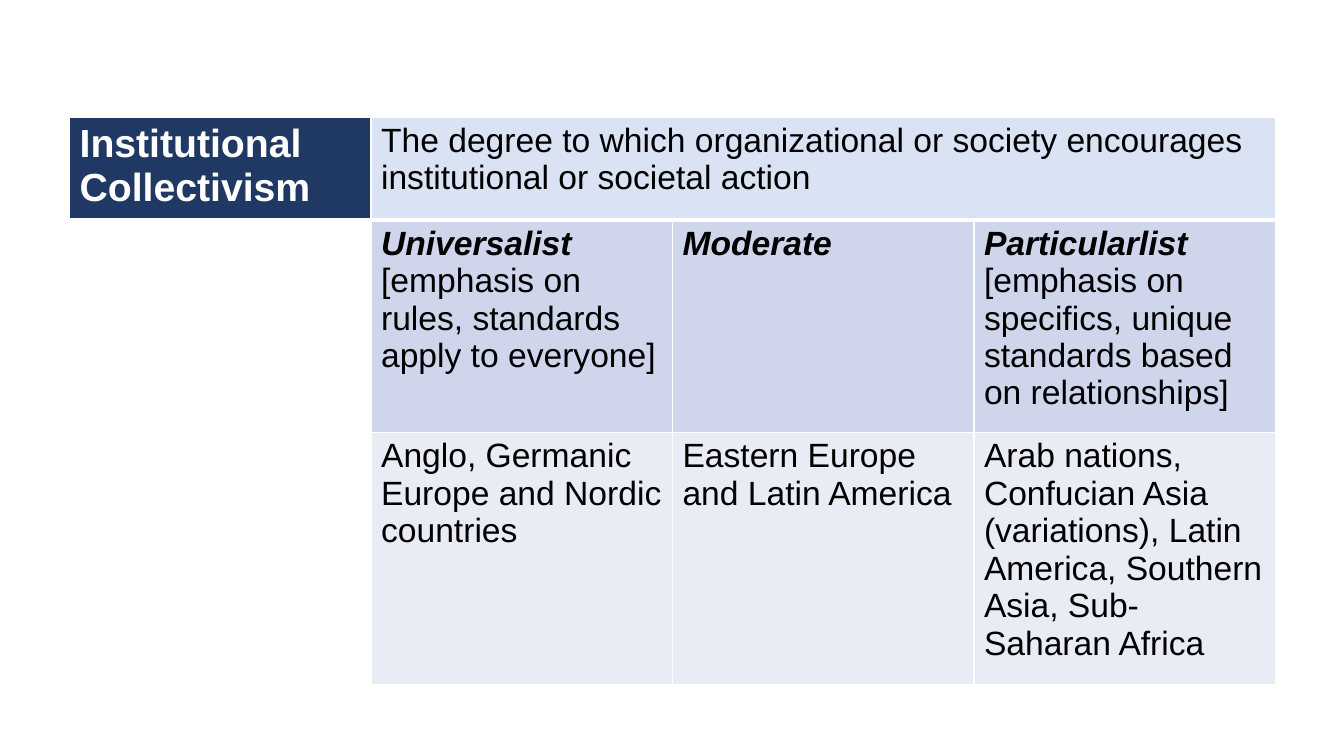
"""Build a slide with a table on institutional collectivism across cultures."""
from lxml import etree
from pptx import Presentation
from pptx.dml.color import RGBColor
from pptx.oxml.ns import qn
from pptx.util import Inches, Pt

THEME = {
    "font": "Arial",
    "term_size": 28,
    "body_size": 24,
    "white": "FFFFFF",
    "black": "000000",
    "navy": "203864",
    "pale_blue": "DAE3F3",
    "band_dark": "CFD5EA",
    "band_light": "E9EBF5",
}
COLUMN_WIDTH = 2.99
ROW_HEIGHTS = [1.02, 2.11, 2.5]

TERM = {"size": Pt(THEME["term_size"]), "bold": True, "italic": False}
BODY = {"size": Pt(THEME["body_size"]), "bold": False, "italic": False}
LABEL = {"size": Pt(THEME["body_size"]), "bold": True, "italic": True}

ROWS = [
    [
        ("navy", "white", [("Institutional Collectivism", TERM)]),
        ("pale_blue", "black", [("The degree to which organizational or society encourages "
                                 "institutional or societal action", BODY)]),
    ],
    [
        None,
        ("band_dark", "black", [("Universalist ", LABEL),
                                ("[emphasis on rules, standards apply to everyone]", BODY)]),
        ("band_dark", "black", [("Moderate", LABEL)]),
        ("band_dark", "black", [("Particularlist ", LABEL),
                                ("[emphasis on specifics, unique standards based on relationships]", BODY)]),
    ],
    [
        None,
        ("band_light", "black", [("Anglo, Germanic Europe and Nordic countries", BODY)]),
        ("band_light", "black", [("Eastern Europe and Latin America", BODY)]),
        ("band_light", "black", [("Arab nations, Confucian Asia (variations), Latin America, "
                                  "Southern Asia, Sub-Saharan Africa", BODY)]),
    ],
]


def add_borders(cell, widths):
    """Draw white cell borders, with widths in points keyed by side."""
    properties = cell._tc.get_or_add_tcPr()
    for side, width in widths.items():
        line = etree.SubElement(properties, qn(f"a:ln{side}"), w=str(Pt(width)))
        fill = etree.SubElement(line, qn("a:solidFill"))
        etree.SubElement(fill, qn("a:srgbClr"), val=THEME["white"])


presentation = Presentation()
presentation.slide_width = Inches(13.33)
presentation.slide_height = Inches(7.5)
slide = presentation.slides.add_slide(presentation.slide_layouts[6])

table = slide.shapes.add_table(
    len(ROW_HEIGHTS), 4, Inches(0.69), Inches(1.16),
    Inches(4 * COLUMN_WIDTH), Inches(sum(ROW_HEIGHTS)),
).table
for column in table.columns:
    column.width = Inches(COLUMN_WIDTH)
for row, height in zip(table.rows, ROW_HEIGHTS):
    row.height = Inches(height)
table.cell(0, 1).merge(table.cell(0, 3))

for row_index, row in enumerate(table.rows):
    top_width = 3 if row_index == 1 else 1
    bottom_width = 3 if row_index == 0 else 1
    for cell in row.cells:
        add_borders(cell, {"L": 1, "R": 1, "T": top_width, "B": bottom_width})

for row_index, contents in enumerate(ROWS):
    for column_index, content in enumerate(contents):
        cell = table.cell(row_index, column_index)
        if content is None:
            cell.fill.background()
            continue
        fill_name, text_name, runs = content
        cell.fill.solid()
        cell.fill.fore_color.rgb = RGBColor.from_string(THEME[fill_name])
        paragraph = cell.text_frame.paragraphs[0]
        for text, font_format in runs:
            run = paragraph.add_run()
            run.text = text
            run.font.name = THEME["font"]
            run.font.color.rgb = RGBColor.from_string(THEME[text_name])
            for name, value in font_format.items():
                setattr(run.font, name, value)

presentation.save("out.pptx")
